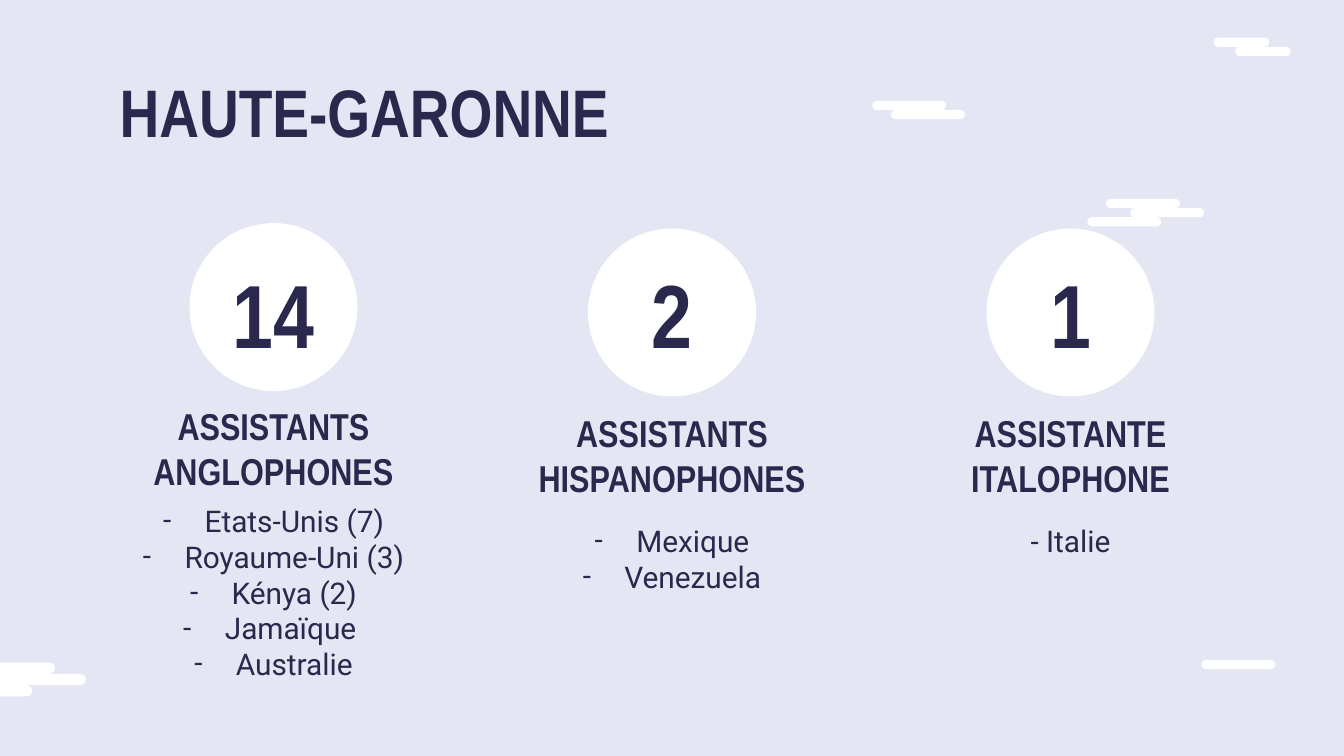
from lxml import etree
from pptx import Presentation
from pptx import util as u
from pptx.dml.color import RGBColor
from pptx.enum import shapes, text
from pptx.oxml.ns import qn

INK, WHITE, SKY = "2A284C", "FFFFFF", "E4E6F4"
CELL = u.Inches(0.1)
COLUMNS, ROWS = 100, 56.25
HEADING = {"name": "Arial Narrow", "bold": True}
LIST = {"name": "Roboto", "bold": False, "size": u.Pt(16)}
CENTER = text.PP_ALIGN.CENTER

CLOUDS = [
    ((-4.4, 49.3, 6.8, 0.84), [(4, 1), (1.7, 0), (0, 2)]),
    ((80.9, 14.8, 5.5, 0.68), [(3.2, 1), (1.4, 0), (0, 2)]),
    ((64.9, 7.5, 5.5, 0.68), [(0, 0), (1.4, 1)]),
    ((89.4, 49.1, 5.5, 0.68), [(0, 0)]),
    ((90.3, 2.8, 4.15, 0.68), [(1.6, 1), (0, 0)]),
]

GROUPS = [
    {"count": "14", "heading": ["ASSISTANTS", "ANGLOPHONES"], "bulleted": True,
     "countries": ["Etats-Unis (7)", "Royaume-Uni (3)", "Kénya (2)", "Jamaïque ", "Australie"],
     "rows": (16.6, 29, 36.4)},
    {"count": "2", "heading": ["ASSISTANTS HISPANOPHONES"], "bulleted": True,
     "countries": ["Mexique", "Venezuela"], "rows": (17, 29.5, 37.9)},
    {"count": "1", "heading": ["ASSISTANTE ITALOPHONE"], "bulleted": False,
     "countries": ["- Italie"], "rows": (17, 29.5, 37.9)},
]


def color(value):
    """Turn a hex string into a colour."""
    return RGBColor.from_string(value)


def cells(*counts):
    """Turn counts of grid cells into lengths."""
    return [u.Emu(round(count * CELL)) for count in counts]


def apply(target, formats):
    """Set every attribute in a dict of format values."""
    for key, value in formats.items():
        setattr(target, key, value)


def add_pill(slide, box):
    """Add a white shape with fully rounded ends."""
    pill = slide.shapes.add_shape(shapes.MSO_SHAPE.ROUNDED_RECTANGLE, *cells(*box))
    pill.adjustments[0] = 0.5
    pill.shadow.inherit = False
    pill.fill.solid()
    pill.fill.fore_color.rgb = color(WHITE)
    pill.line.fill.background()


def write(holder, box, lines, font, align=CENTER, anchor=text.MSO_ANCHOR.TOP):
    """Place a text holder in its box and fill it with formatted lines."""
    apply(holder, dict(zip(("left", "top", "width", "height"), cells(*box))))
    frame = holder.text_frame
    margins = dict.fromkeys(
        ("margin_left", "margin_top", "margin_right", "margin_bottom"), CELL)
    apply(frame, {"word_wrap": True, "auto_size": text.MSO_AUTO_SIZE.NONE,
                  "vertical_anchor": anchor, **margins})
    frame.text = "\n".join(lines)
    for paragraph in frame.paragraphs:
        apply(paragraph, {"alignment": align, "line_spacing": 1.0,
                          "space_before": u.Pt(0), "space_after": u.Pt(0)})
        for run in paragraph.runs:
            apply(run.font, font)
            run.font.color.rgb = color(INK)


def set_bullets(holder, bulleted):
    """Give each paragraph a hanging dash, or no bullet at all."""
    hang = u.Inches(0.31) if bulleted else 0
    for paragraph in holder.text_frame.paragraphs:
        properties = paragraph._p.get_or_add_pPr()
        properties.set("marL", str(hang))
        properties.set("indent", str(-hang))
        if bulleted:
            tint = etree.SubElement(properties, qn("a:buClr"))
            etree.SubElement(tint, qn("a:srgbClr")).set("val", INK)
            etree.SubElement(properties, qn("a:buFont")).set("typeface", "Roboto")
            etree.SubElement(properties, qn("a:buChar")).set("char", "-")
        else:
            etree.SubElement(properties, qn("a:buNone"))


def add_cloud(slide, box, offsets):
    """Stack the bars of one cloud from its top-left corner."""
    left, top, width, height = box
    for across, row in offsets:
        add_pill(slide, (left + across, top + row * height, width, height))


def add_group(slide, left, width, group, country_list):
    """Fill one column with its count, heading and country list."""
    circle_top, heading_top, list_top = group["rows"]
    middle = left + width / 2
    circle, count_width = 12.5, 9.7
    add_pill(slide, (middle - circle / 2, circle_top, circle, circle))
    count = slide.shapes.add_textbox(0, 0, 0, 0)
    write(count, (middle - count_width / 2, 19.7, count_width, 7.1), [group["count"]],
          {**HEADING, "size": u.Pt(48)}, anchor=text.MSO_ANCHOR.MIDDLE)
    heading = slide.shapes.add_textbox(0, 0, 0, 0)
    write(heading, (left, heading_top, width, 4.1), group["heading"],
          {**HEADING, "size": u.Pt(20)})
    write(country_list, (left, list_top, width, 10.2), group["countries"], LIST)
    set_bullets(country_list, group["bulleted"])


def main():
    """Build the slide and save it."""
    deck = Presentation()
    deck.slide_width, deck.slide_height = cells(COLUMNS, ROWS)
    slide = deck.slides.add_slide(deck.slide_layouts.get_by_name("Comparison"))
    slide.background.fill.solid()
    slide.background.fill.fore_color.rgb = color(SKY)
    for box, offsets in CLOUDS:
        add_cloud(slide, box, offsets)
    write(slide.shapes.title, (7.9, 4.2, 84.3, 6.7), ["HAUTE-GARONNE"],
          {**HEADING, "size": u.Pt(36)}, align=text.PP_ALIGN.LEFT)
    bodies = [holder for holder in slide.placeholders
              if 1 <= holder.placeholder_format.idx <= 4]
    for index, (group, body) in enumerate(zip(GROUPS, bodies)):
        add_group(slide, 8.4 + index * 29.65, 23.9, group, body)
    for spare in bodies[len(GROUPS):]:
        spare.element.getparent().remove(spare.element)
    deck.save("out.pptx")


if __name__ == "__main__":
    main()
